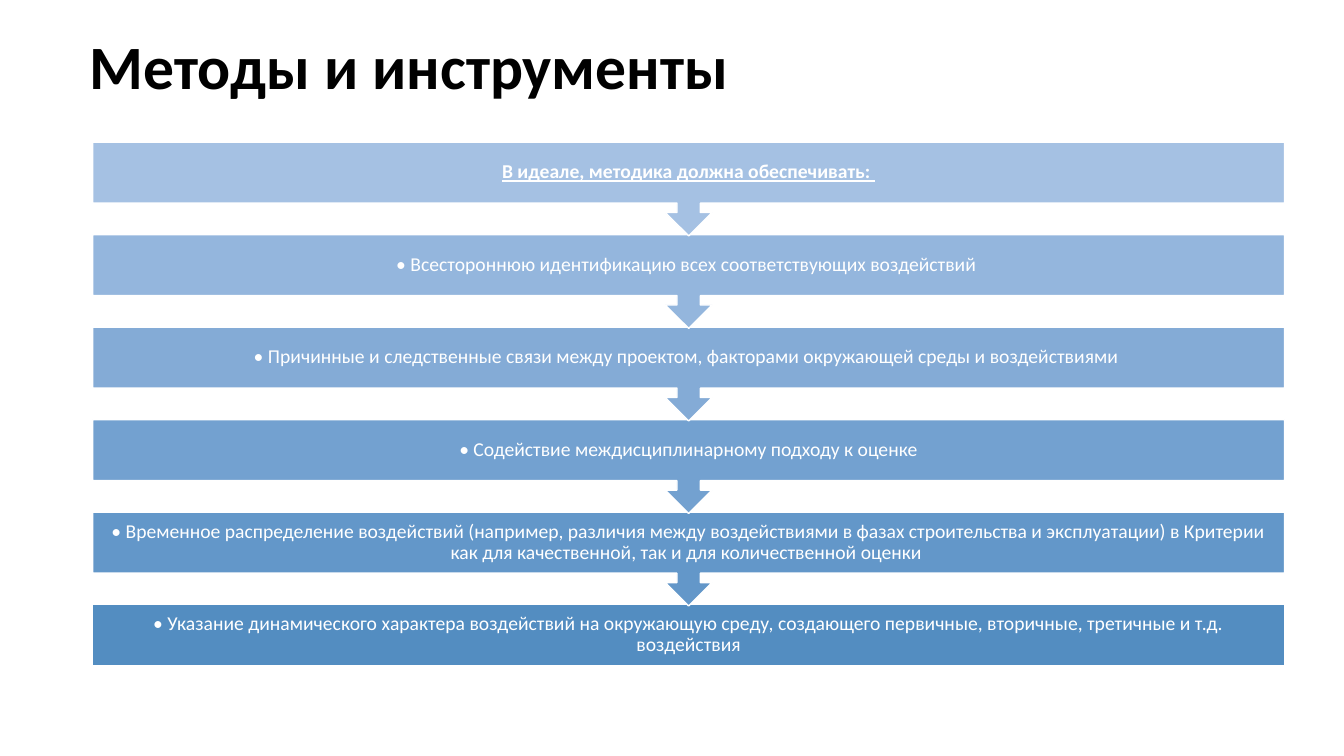
from pptx import Presentation
from pptx.dml.color import RGBColor
from pptx.enum import shapes, text
from pptx.util import Inches, Pt

BLACK = RGBColor(0x00, 0x00, 0x00)
WHITE = RGBColor(0xFF, 0xFF, 0xFF)
STEPS = [
    ("В идеале, методика должна обеспечивать: ", RGBColor(0xA5, 0xC1, 0xE3)),
    ("• Всестороннюю идентификацию всех соответствующих воздействий ",
     RGBColor(0x94, 0xB6, 0xDD)),
    ("• Причинные и следственные связи между проектом, факторами "
     "окружающей среды и воздействиями ", RGBColor(0x84, 0xAB, 0xD6)),
    ("• Содействие междисциплинарному подходу к оценке",
     RGBColor(0x73, 0xA1, 0xD0)),
    ("• Временное распределение воздействий (например, различия между "
     "воздействиями в фазах строительства и эксплуатации) в Критерии как для "
     "качественной, так и для количественной оценки ",
     RGBColor(0x63, 0x97, 0xC9)),
    ("• Указание динамического характера воздействий на окружающую среду, "
     "создающего первичные, вторичные, третичные и т.д. воздействия",
     RGBColor(0x53, 0x8D, 0xC1)),
]
LEFT, WIDTH = 0.92, 11.82
TOP, BOTTOM = 1.41, 6.0
BAR, CALLOUT = 0.6, 0.93


def write(shape, words, size, color, bold=False):
    """Put one middle-anchored run into the shape and return its paragraph and run."""
    frame = shape.text_frame
    frame.word_wrap = True
    frame.vertical_anchor = text.MSO_ANCHOR.MIDDLE
    para = frame.paragraphs[0]
    para.line_spacing = 0.9
    run = para.add_run()
    run.text = words
    run.font.name = "Calibri"
    run.font.size = Pt(size)
    run.font.bold = bold
    run.font.color.rgb = color
    return para, run


prs = Presentation()
prs.slide_width, prs.slide_height = Inches(13.33), Inches(7.5)
slide = prs.slides.add_slide(prs.slide_layouts[6])

title = slide.shapes.add_textbox(Inches(0.79), Inches(-0.04), Inches(11.5), Inches(1.45))
write(title, "Методы и инструменты", 44, BLACK, bold=True)

# Bottom step first, so that each arrow tip lies over the bar below it
last = len(STEPS) - 1
pitch = (BOTTOM - TOP) / last
for i in range(last, -1, -1):
    words, color = STEPS[i]
    top = Inches(TOP + i * pitch)
    kind, height = shapes.MSO_SHAPE.UP_ARROW_CALLOUT, CALLOUT
    if i == last:
        kind, height = shapes.MSO_SHAPE.RECTANGLE, BAR
    bar = slide.shapes.add_shape(kind, Inches(LEFT), top, Inches(WIDTH), Inches(height))
    bar.rotation = 0 if i == last else 180
    bar.shadow.inherit = False
    bar.fill.solid()
    bar.fill.fore_color.rgb = color
    bar.line.color.rgb = WHITE
    bar.line.width = Pt(1)

    label = slide.shapes.add_textbox(Inches(LEFT), top, Inches(WIDTH), Inches(BAR))
    frame = label.text_frame
    frame.margin_left = frame.margin_right = Inches(0.11)
    frame.margin_top = frame.margin_bottom = Inches(0.11)
    para, run = write(label, words, 14, WHITE, bold=i == 0)
    para.alignment = text.PP_ALIGN.CENTER
    run.font.underline = i == 0

prs.save("out.pptx")
